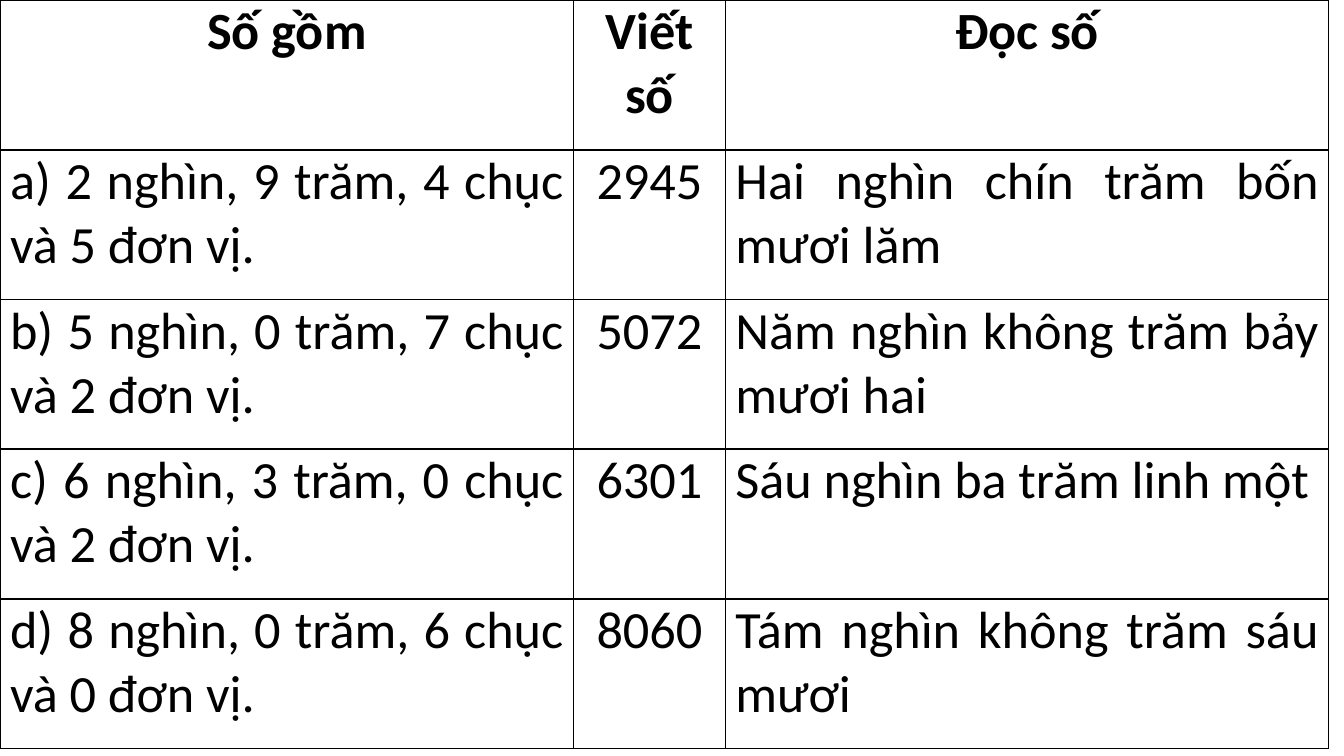
from lxml.etree import SubElement
from pptx import Presentation
from pptx.dml.color import RGBColor
from pptx.enum.text import PP_ALIGN
from pptx.oxml.ns import qn
from pptx.util import Cm, Pt

BLACK = "000000"
COL_WIDTHS = [10.84, 2.87, 11.4]
ROW_HEIGHT = 2.83
ROWS = [
    ("Số gồm", "Viết số", "Đọc số"),
    ("a) 2 nghìn, 9 trăm, 4 chục và 5 đơn vị.", "2945",
     "Hai nghìn chín trăm bốn mươi lăm"),
    ("b) 5 nghìn, 0 trăm, 7 chục và 2 đơn vị.", "5072",
     "Năm nghìn không trăm bảy mươi hai"),
    ("c) 6 nghìn, 3 trăm, 0 chục và 2 đơn vị.", "6301",
     "Sáu nghìn ba trăm linh một"),
    ("d) 8 nghìn, 0 trăm, 6 chục và 0 đơn vị.", "8060",
     "Tám nghìn không trăm sáu mươi"),
]


def rgb(value):
    return RGBColor.from_string(value)


def set_borders(cell, color, width):
    """Draw a solid line on all four sides of a cell."""
    tc_pr = cell._tc.get_or_add_tcPr()
    for side in ("a:lnL", "a:lnR", "a:lnT", "a:lnB"):
        ln = SubElement(tc_pr, qn(side), w=str(Pt(width)))
        fill = SubElement(ln, qn("a:solidFill"))
        SubElement(fill, qn("a:srgbClr"), val=color)


def fill_cell(cell, text, align, bold, side_margin):
    margins = {"margin_left": Cm(side_margin), "margin_right": Cm(side_margin),
               "margin_top": 0, "margin_bottom": 0}
    for name, value in margins.items():
        setattr(cell, name, value)

    # Borders come before the fill in the cell properties
    set_borders(cell, BLACK, 1)
    cell.fill.background()

    p = cell.text_frame.paragraphs[0]
    p.alignment = align
    r = p.add_run()
    r.text = text
    for name, value in {"name": "Calibri", "size": Pt(28), "bold": bold}.items():
        setattr(r.font, name, value)
    r.font.color.rgb = rgb(BLACK)


def add_number_table(slide):
    table = slide.shapes.add_table(
        len(ROWS), len(COL_WIDTHS), 0, 0,
        Cm(sum(COL_WIDTHS)), Cm(ROW_HEIGHT * len(ROWS))).table
    for column, width in zip(table.columns, COL_WIDTHS):
        column.width = Cm(width)
    for i, texts in enumerate(ROWS):
        table.rows[i].height = Cm(ROW_HEIGHT)
        for j, text in enumerate(texts):
            # Header row and the number column are centred
            centred = i == 0 or j == 1
            align = PP_ALIGN.CENTER if centred else PP_ALIGN.JUSTIFY
            side_margin = 0 if i == j == 0 else 0.19
            fill_cell(table.cell(i, j), text, align, i == 0, side_margin)


def main():
    prs = Presentation()
    prs.slide_width, prs.slide_height = Cm(25.4), Cm(14.29)
    # Blank layout: the slide has no title
    slide = prs.slides.add_slide(prs.slide_layouts[6])
    add_number_table(slide)
    prs.save("out.pptx")


if __name__ == "__main__":
    main()
